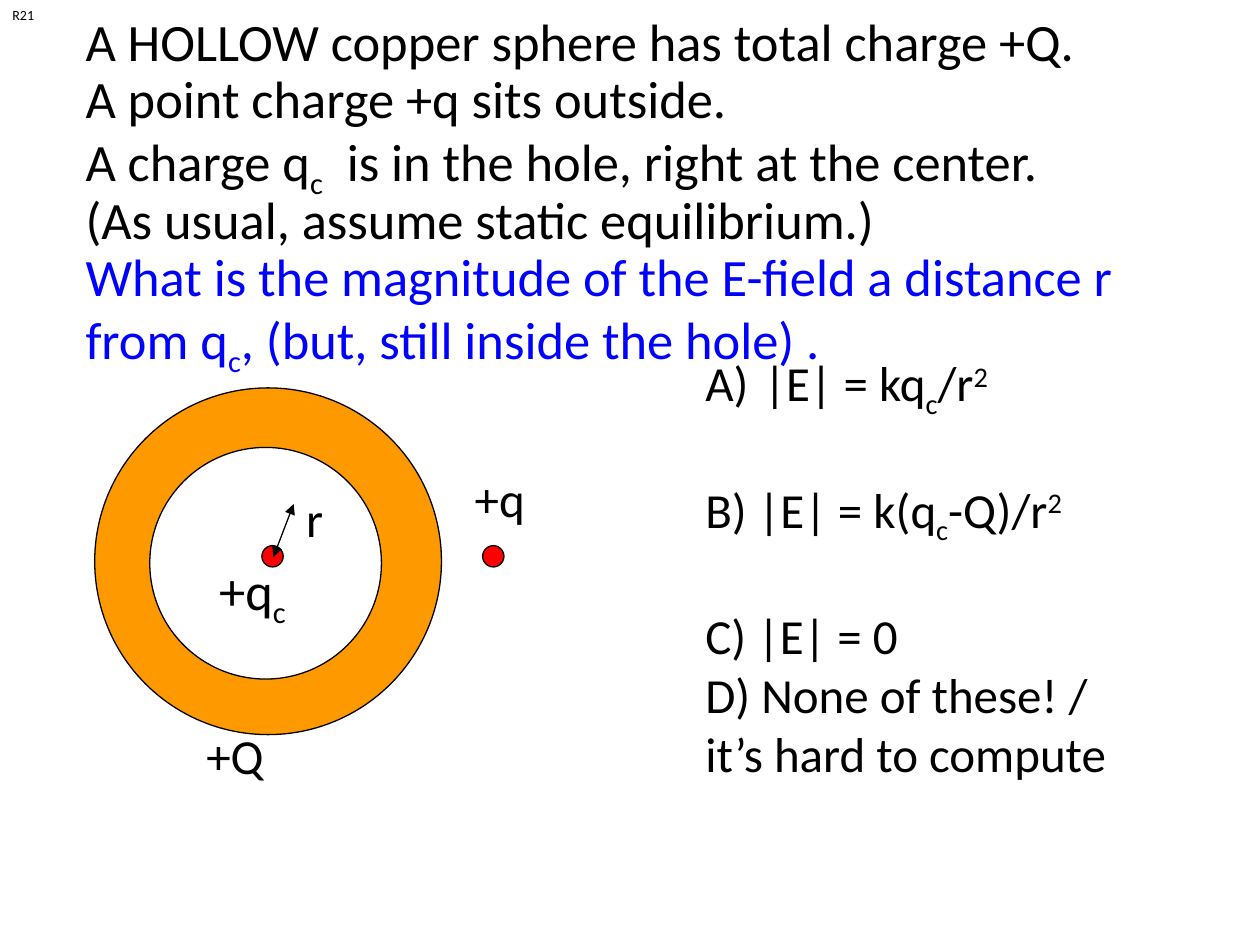
import lxml.etree
import pptx
import pptx.util
import pptx.dml.color
import pptx.enum.shapes
import pptx.enum.text
import pptx.oxml.ns

Cm, Pt = pptx.util.Cm, pptx.util.Pt
COLORS = {"ink": "000000", "question": "0000FF", "copper": "FF9900",
          "hole": "FFFFFF", "charge": "FF0000"}

# A run is a string, or a (string, baseline shift in percent) pair.
SUB_C, SQUARED = ("c", -25), ("2", 30)
SETUP = [
    ["A HOLLOW copper sphere has total charge +Q."],
    ["A point charge +q sits outside."],
    ["A charge q", SUB_C, "  is in the hole, right at the center."],
    ["(As usual, assume static equilibrium.)"],
]
QUESTION = ["What is the magnitude of the E-field a distance r from q", SUB_C,
            ", (but, still inside the hole) ."]
# runs, space before in points, automatic letter
ANSWERS = [
    ([" |E| = kq", SUB_C, "/r", SQUARED], 0, True),
    (["B) |E| = k(q", SUB_C, "-Q)/r", SQUARED], 34, False),
    (["C) |E| = 0"], 34, False),
    (["D) None of these! /"], 0, False),
    (["it’s hard to compute"], 0, False),
]
# left, top, diameter, fill (cm)
CIRCLES = [
    (1.91, 7.82, 6.99, "copper"),
    (3.02, 9.02, 4.67, "hole"),
    (9.73, 11, 0.43, "charge"),
    (5.28, 11, 0.43, "charge"),
]
RADIUS = (5.51, 11.23, 5.92, 10.16)
# runs, left, top, width, height (cm), size
LABELS = [
    (["+q"], 9.32, 9.32, 1.63, 1.45, 28),
    (["+Q"], 3.91, 14.5, 1.85, 1.45, 28),
    (["+q", SUB_C], 4.17, 11.13, 2.08, 1.52, 30),
    (["r"], 5.92, 9.73, 0.84, 1.45, 28),
    (["R21"], 0, 0, 0.97, 0.61, 8),
]


def rgb(name):
    return pptx.dml.color.RGBColor.from_string(COLORS[name])


def add_xml(parent, tag, **attributes):
    lxml.etree.SubElement(parent, pptx.oxml.ns.qn(f"a:{tag}"), **attributes)


def write(tf, runs, size=28, color="ink", spacing=1.0, before=0,
          hanging=0, lettered=False):
    """Add one paragraph, using the first one while it is still empty."""
    p = tf.paragraphs[0]
    if p.runs:
        p = tf.add_paragraph()
    p.line_spacing, p.space_before = spacing, Pt(before)
    pPr = p._p.get_or_add_pPr()
    pPr.set("marL", str(int(Cm(hanging))))
    pPr.set("indent", str(-int(Cm(hanging))))
    if lettered:
        add_xml(pPr, "buAutoNum", type="alphaUcParenR")
    else:
        add_xml(pPr, "buNone")
    for run in runs:
        text, shift = (run, 0) if isinstance(run, str) else run
        r = p.add_run()
        r.text = text
        r.font.name, r.font.size = "Calibri", Pt(size)
        r.font.color.rgb = rgb(color)
        if shift:
            r._r.get_or_add_rPr().set("baseline", str(shift * 1000))


def add_box(slide, left, top, width, height, wrap=False):
    sp = slide.shapes.add_textbox(Cm(left), Cm(top), Cm(width), Cm(height))
    sp.text_frame.word_wrap = wrap
    return sp.text_frame


def add_circle(slide, left, top, diameter, fill):
    sp = slide.shapes.add_shape(pptx.enum.shapes.MSO_SHAPE.OVAL, Cm(left), Cm(top),
                                Cm(diameter), Cm(diameter))
    sp.shadow.inherit = False
    sp.fill.solid()
    sp.fill.fore_color.rgb = rgb(fill)
    sp.line.color.rgb, sp.line.width = rgb("ink"), Pt(0.75)


def add_double_arrow(slide, ends):
    line = slide.shapes.add_connector(pptx.enum.shapes.MSO_CONNECTOR.STRAIGHT,
                                      *(Cm(v) for v in ends))
    line.line.color.rgb, line.line.width = rgb("ink"), Pt(0.75)
    spPr = line._element.spPr
    ln = spPr.find(pptx.oxml.ns.qn("a:ln"))
    for end in ("headEnd", "tailEnd"):
        add_xml(ln, end, type="triangle")
    add_xml(spPr, "effectLst")


def main():
    prs = pptx.Presentation()
    prs.slide_width, prs.slide_height = Cm(25.4), Cm(19.05)
    slide = prs.slides.add_slide(prs.slide_layouts[1])
    title, body = slide.placeholders
    title._element.getparent().remove(title._element)

    body.left, body.top, body.width, body.height = Cm(1.47), Cm(0.2), Cm(23.06), Cm(9.86)
    tf = body.text_frame
    tf.auto_size = pptx.enum.text.MSO_AUTO_SIZE.NONE
    for runs in SETUP:
        write(tf, runs, size=30, spacing=0.9)
    write(tf, QUESTION, size=30, spacing=0.9, color="question")

    tf = add_box(slide, 13.97, 6.99, 9.53, 7.85, wrap=True)
    for runs, before, lettered in ANSWERS:
        write(tf, runs, before=before, hanging=0.95, lettered=lettered)

    for circle in CIRCLES:
        add_circle(slide, *circle)
    add_double_arrow(slide, RADIUS)
    for runs, left, top, width, height, size in LABELS:
        write(add_box(slide, left, top, width, height), runs, size=size)
    prs.save("out.pptx")


if __name__ == "__main__":
    main()
